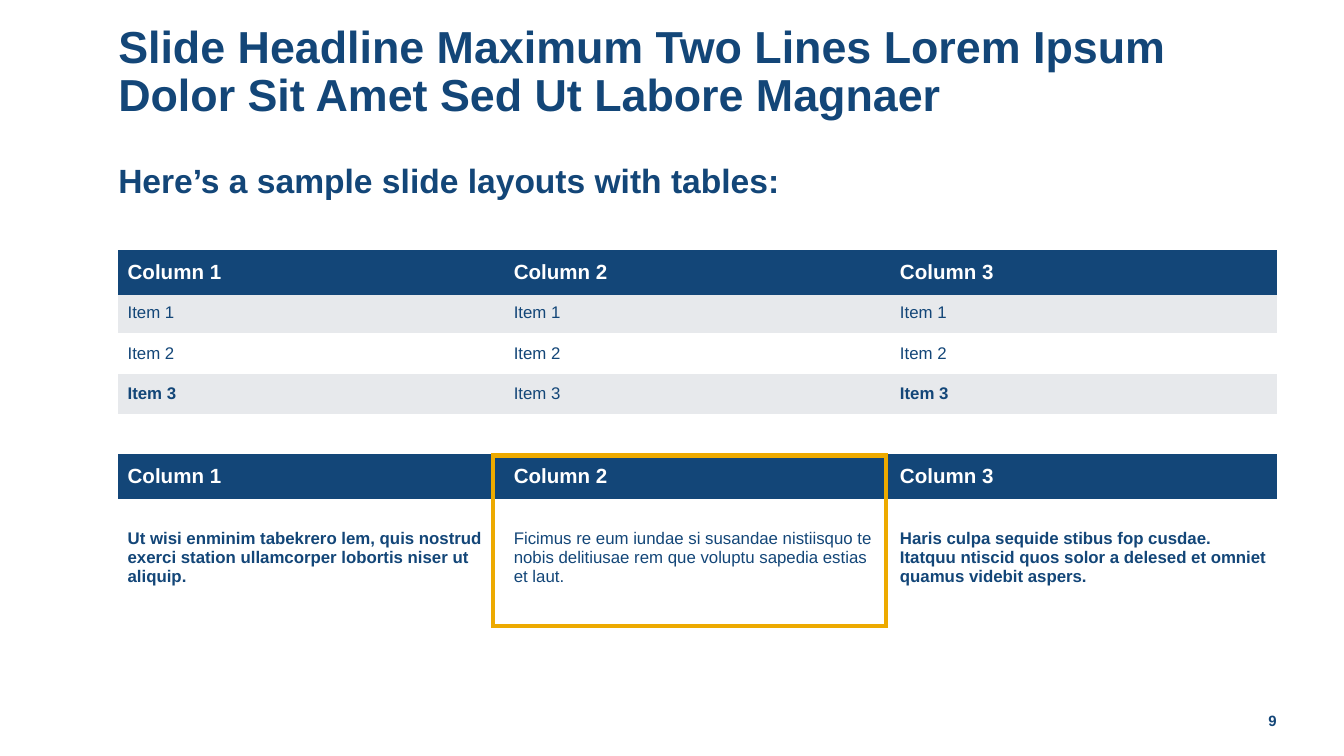
"""Build a slide with a headline, two tables and a highlighted column."""
from lxml.etree import SubElement
from pptx import Presentation
from pptx.dml.color import RGBColor
from pptx.enum.shapes import MSO_SHAPE as Shape
from pptx.enum.text import MSO_ANCHOR as Anchor, MSO_AUTO_SIZE as AutoSize, PP_ALIGN as Align
from pptx.oxml import parse_xml
from pptx.oxml.ns import nsdecls, qn
from pptx.util import Inches, Pt

NAVY = RGBColor(0x13, 0x46, 0x78)
GOLD = RGBColor(0xED, 0xAA, 0x00)
GRAY = RGBColor(0xE7, 0xE9, 0xEC)
WHITE = RGBColor(0xFF, 0xFF, 0xFF)
FONT = "Arial"
NO_STYLE = "{2D5ABB26-0587-4C30-8999-92F81FD0307C}"

HEADLINE = "Slide Headline Maximum Two Lines Lorem Ipsum Dolor Sit Amet Sed Ut Labore Magnaer"
SUBHEAD = "Here’s a sample slide layouts with tables:"
PAGE_NUMBER = "9"
HEADER = ["Column 1", "Column 2", "Column 3"]
ITEMS = [[f"Item {number}"] * len(HEADER) for number in (1, 2, 3)]
SUMMARY = [
    "Ut wisi enminim tabekrero lem, quis nostrud exerci station ullamcorper lobortis niser ut aliquip.",
    "Ficimus re eum iundae si susandae nistiisquo te nobis delitiusae rem que voluptu sapedia estias et laut.",
    "Haris culpa sequide stibus fop cusdae. Itatquu ntiscid quos solor a delesed et omniet quamus videbit aspers.",
]
TABLES = [
    {"top": 1.87, "rows": [HEADER, *ITEMS], "heights": [0.31, 0.3, 0.3, 0.3], "fills": [NAVY, GRAY, WHITE, GRAY]},
    {"top": 3.39, "rows": [HEADER, SUMMARY], "heights": [0.31, 0.9], "fills": [NAVY, WHITE]},
]

SLIDE_WIDTH = 10
SLIDE_HEIGHT = SLIDE_WIDTH * 9 / 16
LEFT, WIDTH = 0.88, 8.62
COLUMN = WIDTH / len(HEADER)
RIGHT = LEFT + WIDTH


def write(frame, text, size, color=NAVY, bold=True, align=Align.LEFT, spacing=1.0):
    paragraph = frame.paragraphs[0]
    paragraph.text = text
    paragraph.alignment = align
    paragraph.line_spacing = spacing
    paragraph.space_before = Pt(0)
    font = paragraph.font
    font.name, font.size, font.bold = FONT, Pt(size), bold
    font.color.rgb = color


def place(shape, left, top, width, height, anchor):
    shape.left, shape.top = Inches(left), Inches(top)
    shape.width, shape.height = Inches(width), Inches(height)
    frame = shape.text_frame
    frame.margin_left = frame.margin_right = frame.margin_top = frame.margin_bottom = 0
    frame.word_wrap = True
    frame.auto_size = AutoSize.NONE
    frame.vertical_anchor = anchor
    return frame


def add_borders(cell, color, points):
    properties = cell._tc.get_or_add_tcPr()
    for position, side in enumerate(("lnT", "lnB")):
        properties.insert(position, parse_xml(
            f'<a:{side} {nsdecls("a")} w="{Pt(points)}"><a:solidFill>'
            f'<a:srgbClr val="{color}"/></a:solidFill></a:{side}>'))


def add_table(slide, top, rows, heights, fills):
    frame = slide.shapes.add_table(len(rows), len(HEADER), Inches(LEFT), Inches(top),
                                   Inches(WIDTH), Inches(sum(heights)))
    table = frame.table
    table.horz_banding = False
    table._tbl.tblPr.find(qn("a:tableStyleId")).text = NO_STYLE
    for column in table.columns:
        column.width = Inches(COLUMN)
    last_row, last_column = len(rows) - 1, len(HEADER) - 1
    for r, values in enumerate(rows):
        table.rows[r].height = Inches(heights[r])
        for c, text in enumerate(values):
            cell = table.cell(r, c)
            cell.margin_left = cell.margin_right = Inches(0.07)
            cell.margin_top = cell.margin_bottom = Inches(0.04)
            cell.vertical_anchor = Anchor.MIDDLE
            cell.fill.solid()
            cell.fill.fore_color.rgb = fills[r]
            if r == 0:
                write(cell.text_frame, text, 11, color=WHITE)
                add_borders(cell, NAVY, 2)
            else:
                write(cell.text_frame, text, 9, bold=r == last_row and c in (0, last_column))


def main():
    presentation = Presentation()
    presentation.slide_width, presentation.slide_height = Inches(SLIDE_WIDTH), Inches(SLIDE_HEIGHT)
    slide = presentation.slides.add_slide(presentation.slide_layouts[1])

    title = place(slide.shapes.title, LEFT, 0, WIDTH, 1.09, Anchor.MIDDLE)
    write(title, HEADLINE, 24, spacing=0.9)

    body = place(slide.placeholders[1], LEFT, 1.22, WIDTH, 3.85, Anchor.TOP)
    properties = body.paragraphs[0]._p.get_or_add_pPr()
    properties.set("marL", "0")
    properties.set("indent", "0")
    SubElement(properties, qn("a:buNone"))
    write(body, SUBHEAD, 18, spacing=0.9)

    number_box = slide.shapes.add_textbox(0, 0, 0, 0)
    number_frame = place(number_box, RIGHT - 0.33, 5.21, 0.33, 0.3, Anchor.MIDDLE)
    write(number_frame, PAGE_NUMBER, 8, align=Align.RIGHT)

    for table in TABLES:
        add_table(slide, **table)

    summary = TABLES[-1]
    highlight = slide.shapes.add_shape(Shape.RECTANGLE, Inches(3.67), Inches(summary["top"]),
                                       Inches(2.92), Inches(1.27))
    highlight.shadow.inherit = False
    highlight.fill.background()
    highlight.line.color.rgb = GOLD
    highlight.line.width = Pt(2.25)
    SubElement(highlight.line._get_or_add_ln(), qn("a:miter"), lim="800000")

    presentation.save("out.pptx")


if __name__ == "__main__":
    main()
